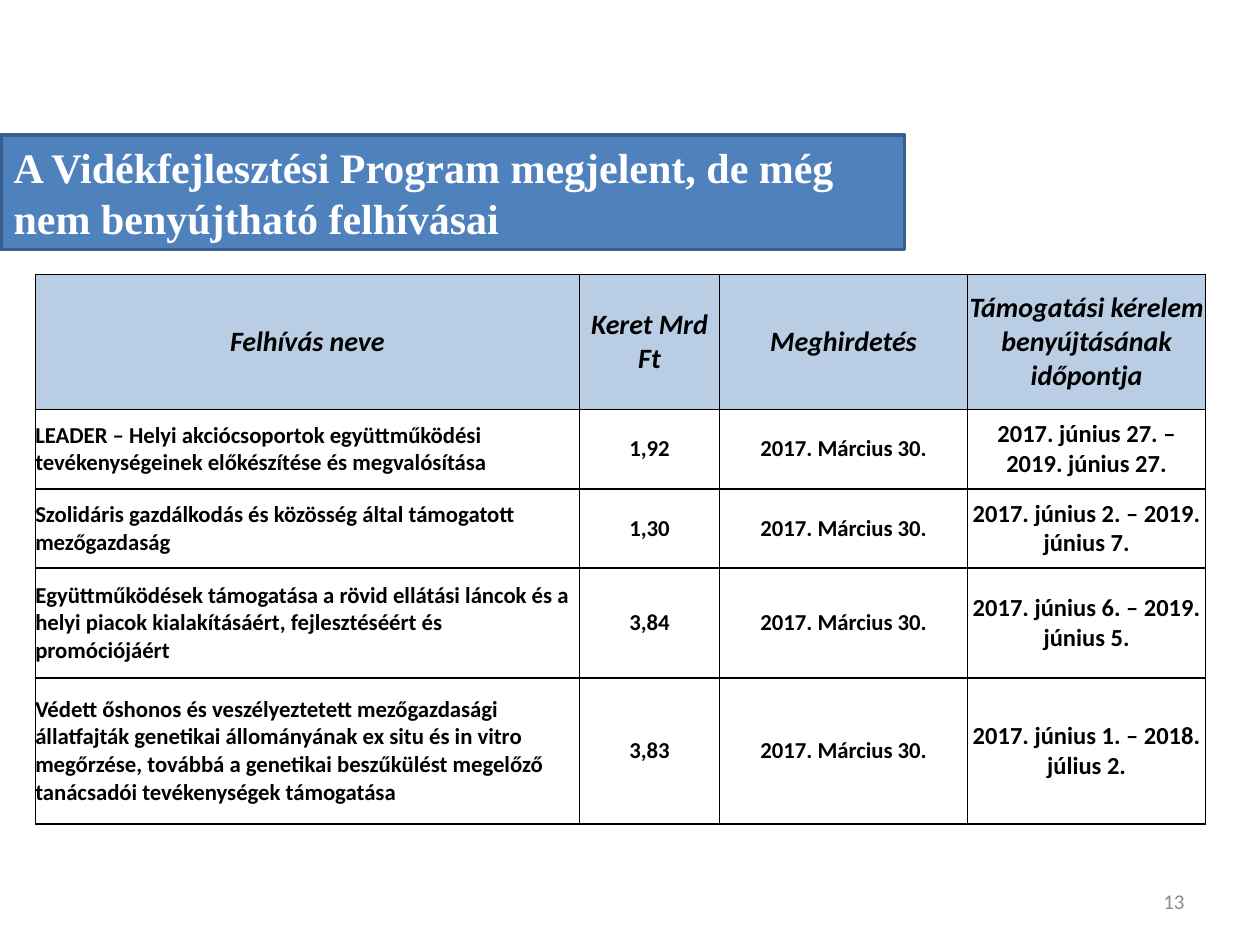
from dataclasses import dataclass

from lxml import etree
from pptx import Presentation
from pptx.dml.color import RGBColor
from pptx.enum.shapes import MSO_SHAPE
from pptx.enum.text import MSO_ANCHOR, PP_ALIGN
from pptx.oxml.ns import qn
from pptx.util import Inches, Pt

LEFT, CENTER, RIGHT = PP_ALIGN.LEFT, PP_ALIGN.CENTER, PP_ALIGN.RIGHT
MIDDLE = MSO_ANCHOR.MIDDLE
RECTANGLE = MSO_SHAPE.RECTANGLE

COLORS = {
    "banner": "4F81BD",
    "banner_line": "3A5F8C",
    "header": "B9CDE5",
    "white": "FFFFFF",
    "black": "000000",
    "gray": "8C8C8C",
}


@dataclass(frozen=True)
class Style:
    size: int
    align: PP_ALIGN = CENTER
    color: str = "black"
    font: str = "Calibri"
    bold: bool = True
    italic: bool = False


@dataclass(frozen=True)
class Call:
    name: str
    budget: str
    period: str
    height: float
    announced: str = "2017. Március 30."


HEADERS = ("Felhívás neve", "Keret Mrd Ft", "Meghirdetés",
           "Támogatási kérelem benyújtásának időpontja")
HEADER_HEIGHT = 1.07
COLUMN_WIDTHS = (4.32, 1.11, 1.97, 1.89)
HEADER_STYLE = Style(16, italic=True)
BODY_STYLES = (Style(13, LEFT), Style(13), Style(13), Style(14))
CALLS = (
    Call("LEADER – Helyi akciócsoportok együttműködési tevékenységeinek "
         "előkészítése és megvalósítása",
         "1,92", "2017. június 27. – 2019. június 27.", 0.63),
    Call("Szolidáris gazdálkodás és közösség által támogatott mezőgazdaság",
         "1,30", "2017. június 2. – 2019. június 7.", 0.63),
    Call("Együttműködések támogatása a rövid ellátási láncok és a helyi piacok "
         "kialakításáért, fejlesztéséért és promóciójáért",
         "3,84", "2017. június 6. – 2019. június 5.", 0.87),
    Call("Védett őshonos és veszélyeztetett mezőgazdasági állatfajták genetikai "
         "állományának ex situ és in vitro megőrzése, továbbá a genetikai "
         "beszűkülést megelőző tanácsadói tevékenységek támogatása",
         "3,83", "2017. június 1. – 2018. július 2.", 1.16),
)


def rgb(name: str) -> RGBColor:
    return RGBColor.from_string(COLORS[name])


def write(tf, text: str, style: Style) -> None:
    tf.word_wrap = True
    p = tf.paragraphs[0]
    p.text = text
    p.alignment = style.align
    p.font.size = Pt(style.size)
    p.font.name = style.font
    p.font.bold = style.bold
    p.font.italic = style.italic
    p.font.color.rgb = rgb(style.color)


def add_borders(cell) -> None:
    tc_pr = cell._tc.get_or_add_tcPr()
    for side in ("a:lnL", "a:lnR", "a:lnT", "a:lnB"):
        ln = etree.SubElement(tc_pr, qn(side), w=str(Pt(1)))
        fill = etree.SubElement(ln, qn("a:solidFill"))
        etree.SubElement(fill, qn("a:srgbClr"), val=COLORS["black"])


def fill_cell(cell, text: str, style: Style, fill: str) -> None:
    cell.margin_left = cell.margin_right = Inches(0)
    cell.margin_top = cell.margin_bottom = Inches(0)
    cell.vertical_anchor = MIDDLE
    add_borders(cell)
    cell.fill.solid()
    cell.fill.fore_color.rgb = rgb(fill)
    write(cell.text_frame, text, style)


def add_calls_table(s) -> None:
    heights = (HEADER_HEIGHT, *(call.height for call in CALLS))
    table = s.shapes.add_table(
        len(heights), len(COLUMN_WIDTHS), Inches(0.28), Inches(2.18),
        Inches(sum(COLUMN_WIDTHS)), Inches(sum(heights))).table
    for column, width in zip(table.columns, COLUMN_WIDTHS):
        column.width = Inches(width)
    for row, height in zip(table.rows, heights):
        row.height = Inches(height)
    for i, text in enumerate(HEADERS):
        fill_cell(table.cell(0, i), text, HEADER_STYLE, "header")
    for i, call in enumerate(CALLS, 1):
        values = (call.name, call.budget, call.announced, call.period)
        for j, (text, style) in enumerate(zip(values, BODY_STYLES)):
            fill_cell(table.cell(i, j), text, style, "white")


def add_banner(s, text: str) -> None:
    sp = s.shapes.add_shape(RECTANGLE, Inches(0.01), Inches(1.07),
                            Inches(7.17), Inches(0.91))
    sp.shadow.inherit = False
    sp.fill.solid()
    sp.fill.fore_color.rgb = rgb("banner")
    sp.line.color.rgb = rgb("banner_line")
    sp.line.width = Pt(2)
    sp.text_frame.vertical_anchor = MIDDLE
    write(sp.text_frame, text, Style(24, LEFT, "white", "Times New Roman"))


def add_page_number(s, text: str) -> None:
    sp = s.shapes.add_textbox(Inches(7.17), Inches(6.95), Inches(2.33), Inches(0.4))
    sp.text_frame.vertical_anchor = MIDDLE
    write(sp.text_frame, text, Style(12, RIGHT, "gray", bold=False))


def main() -> None:
    """Build the slide of announced calls that are not yet open."""
    prs = Presentation()
    prs.slide_width, prs.slide_height = Inches(10), Inches(7.5)
    s = prs.slides.add_slide(prs.slide_layouts[6])
    add_page_number(s, "13")
    add_calls_table(s)
    add_banner(s, "A Vidékfejlesztési Program megjelent, de még "
                  "nem benyújtható felhívásai")
    prs.save("out.pptx")


if __name__ == "__main__":
    main()
